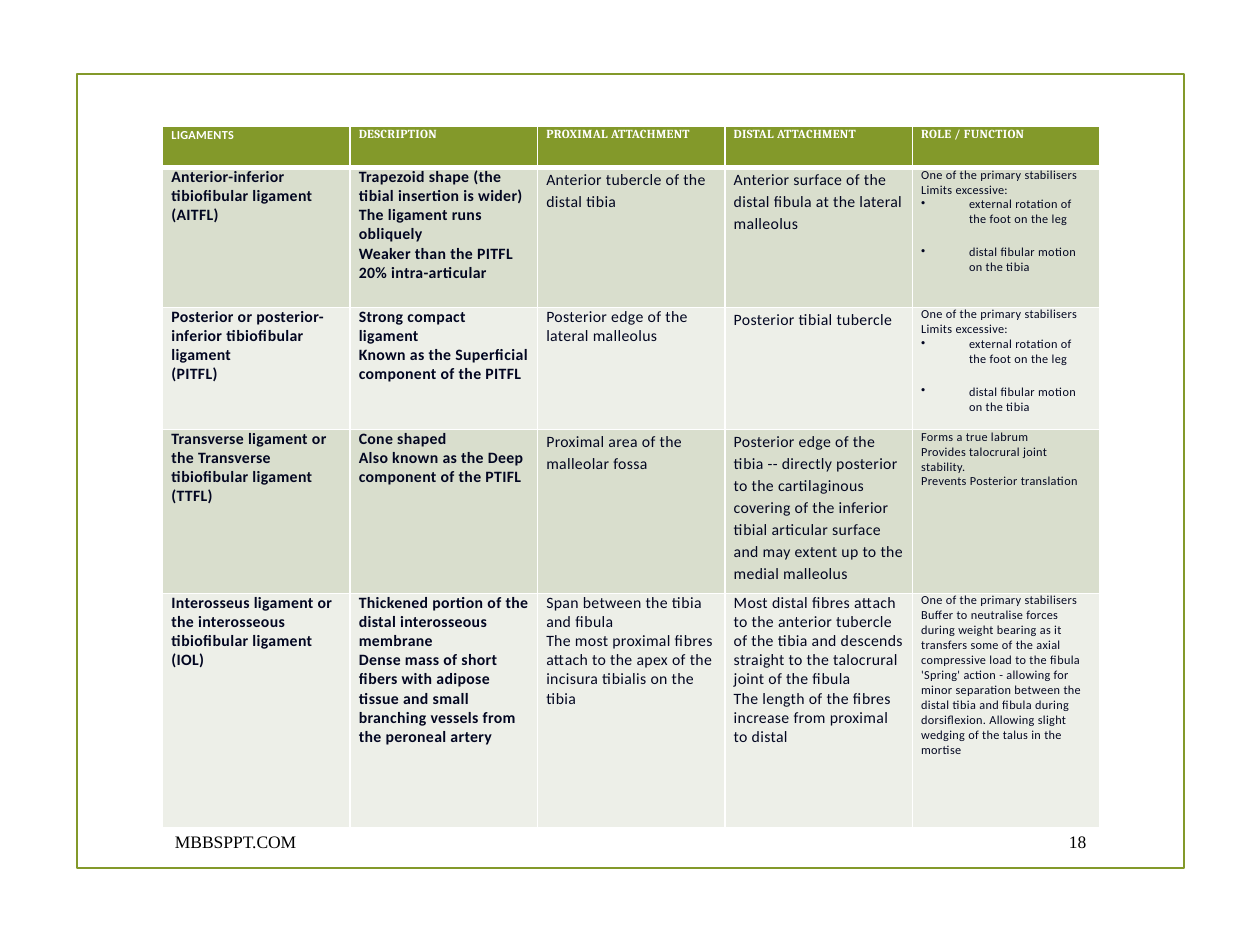
import pptx
import pptx.util
import pptx.oxml
import pptx.oxml.ns
import pptx.dml.color
import pptx.enum.shapes
import pptx.enum.text
from pptx.util import Inches

COLORS = {"green": "83992A", "white": "FFFFFF", "ink": "020621",
          "band": "D9DECD", "pale": "EDEFE8", "black": "000000"}
BULLET = "• "
ROW_HEIGHTS = [0.33, 1.11, 0.97, 1.3, 1.86]
ROLE_COLUMN = 4
# Body cells set at 1.15 line spacing, as (row, column)
LOOSE_CELLS = {(1, 2), (1, 3), (2, 3), (3, 2), (3, 3)}
LIMITS = [BULLET + "external rotation of the foot on the leg",
          BULLET + "distal fibular motion on the tibia"]

# Each cell is a list of paragraphs
ROWS = [
    [["LIGAMENTS"], ["DESCRIPTION"], ["PROXIMAL ATTACHMENT"],
     ["DISTAL ATTACHMENT"], ["ROLE / FUNCTION"]],
    [["Anterior-inferior tibiofibular ligament", "(AITFL)"],
     ["Trapezoid shape (the tibial insertion is wider)",
      "The ligament runs obliquely", "Weaker than the PITFL",
      "20% intra-articular"],
     ["Anterior tubercle of the distal tibia"],
     ["Anterior surface of the distal fibula at the lateral malleolus"],
     ["One of the primary stabilisers\vLimits excessive:"] + LIMITS],
    [["Posterior or posterior-inferior tibiofibular ligament", "(PITFL)"],
     ["Strong compact ligament",
      "Known as the Superficial component of the PITFL"],
     ["Posterior edge of the lateral malleolus"],
     ["Posterior tibial tubercle"],
     ["One of the primary stabilisers Limits excessive:"] + LIMITS],
    [["Transverse ligament or the Transverse tibiofibular ligament", "(TTFL)"],
     ["Cone shaped", "Also known as the Deep component of the PTIFL"],
     ["Proximal area of the malleolar fossa"],
     ["Posterior edge of the tibia -- directly posterior to the cartilaginous "
      "covering of the inferior tibial articular surface and may extent up to "
      "the medial malleolus"],
     ["Forms a true labrum", "Provides talocrural joint stability.",
      "Prevents Posterior translation"]],
    [["Interosseus ligament or the interosseous tibiofibular ligament", "(IOL)"],
     ["Thickened portion of the distal interosseous membrane",
      "Dense mass of short fibers with adipose tissue and small branching "
      "vessels from the peroneal artery"],
     ["Span between the tibia and fibula",
      "The most proximal fibres attach to the apex of the incisura tibialis "
      "on the tibia"],
     ["Most distal fibres attach to the anterior tubercle of the tibia and "
      "descends straight to the talocrural joint of the fibula",
      "The length of the fibres increase from proximal to distal"],
     ["One of the primary stabilisers",
      "Buffer to neutralise forces during weight bearing as it transfers some "
      "of the axial compressive load to the fibula",
      "'Spring' action - allowing for minor separation between the distal "
      "tibia and fibula during dorsiflexion. Allowing slight wedging of the "
      "talus in the mortise"]],
]


def rgb(name):
    return pptx.dml.color.RGBColor.from_string(COLORS[name])


def set_all(target, values):
    for name, value in values.items():
        setattr(target, name, value)


def add_element(parent, tag, **attributes):
    child = pptx.oxml.parse_xml(f"<a:{tag} {pptx.oxml.ns.nsdecls('a')}/>")
    for name, value in attributes.items():
        child.set(name, str(value))
    parent.append(child)
    return child


def format_spans(para, color, font, spacing=None):
    for span in para.runs:
        set_all(span.font, font)
        span.font.color.rgb = rgb(color)
        if spacing:
            span.font._element.set("spc", str(spacing))


def make_bullet(para):
    props = para._p.get_or_add_pPr()
    props.set("marL", str(Inches(0.38)))
    props.set("indent", str(-Inches(0.38)))
    add_element(props, "buChar", char="•")
    add_element(add_element(props, "tabLst"), "tab", pos=Inches(0.5), algn="l")
    para.space_after = pptx.util.Pt(10)


def add_borders(cell, bottom):
    props = cell._tc.get_or_add_tcPr()
    for side, width in {"L": 1, "R": 1, "T": 1, "B": bottom}.items():
        line = add_element(props, "ln" + side, w=pptx.util.Pt(width))
        add_element(add_element(line, "solidFill"), "srgbClr", val=COLORS["white"])


def fill_cell(cell, row, column, texts):
    header = row == 0
    set_all(cell, {"margin_left": Inches(0.07), "margin_right": Inches(0.07),
                   "margin_top": 0, "margin_bottom": 0})
    add_borders(cell, 3 if header else 1)
    cell.fill.solid()
    cell.fill.fore_color.rgb = rgb("green" if header else "band" if row % 2 else "pale")
    small = header or column == ROLE_COLUMN
    font = {"name": "Cambria" if header and column else "Calibri",
            "size": pptx.util.Pt(7 if small else 9),
            "bold": header or column < 2}
    frame = cell.text_frame
    for index, text in enumerate(texts):
        para = frame.add_paragraph() if index else frame.paragraphs[0]
        para.text = text.removeprefix(BULLET)
        if text.startswith(BULLET):
            make_bullet(para)
        if header or (row, column) in LOOSE_CELLS:
            para.line_spacing = 1.15
        format_spans(para, "white" if header else "ink", font, spacing=20)


def add_frame(page, box):
    frame = page.shapes.add_shape(pptx.enum.shapes.MSO_SHAPE.RECTANGLE, *box)
    frame.shadow.inherit = False
    frame.fill.background()
    frame.line.color.rgb = rgb("green")
    frame.line.width = pptx.util.Pt(1.25)


def add_ligament_table(page, box):
    table = page.shapes.add_table(len(ROWS), len(ROWS[0]), *box).table
    for column in table.columns:
        column.width = box[2] // len(ROWS[0])
    for row, cells in enumerate(ROWS):
        table.rows[row].height = Inches(ROW_HEIGHTS[row])
        for column, texts in enumerate(cells):
            fill_cell(table.cell(row, column), row, column, texts)


def add_footer_text(page, box, text, align):
    frame = page.shapes.add_textbox(*box).text_frame
    set_all(frame, {"word_wrap": True,
                    "vertical_anchor": pptx.enum.text.MSO_ANCHOR.MIDDLE})
    para = frame.paragraphs[0]
    para.text = text
    para.alignment = align
    format_spans(para, "black", {"name": "Times New Roman", "size": pptx.util.Pt(10)})


def main():
    deck = pptx.Presentation()
    set_all(deck, {"slide_width": Inches(10), "slide_height": Inches(7.5)})
    page = deck.slides.add_slide(deck.slide_layouts[6])

    # Border, table and footer
    add_frame(page, [Inches(v) for v in (0.61, 0.59, 8.79, 6.3)])
    add_ligament_table(page, [Inches(v) for v in (1.29, 1, 7.44, 5.57)])
    align = pptx.enum.text.PP_ALIGN
    add_footer_text(page, [Inches(v) for v in (1.29, 6.52, 5.58, 0.31)],
                    "MBBSPPT.COM", align.LEFT)
    add_footer_text(page, [Inches(v) for v in (8.29, 6.52, 0.43, 0.31)],
                    "18", align.RIGHT)
    deck.save("out.pptx")


if __name__ == "__main__":
    main()
